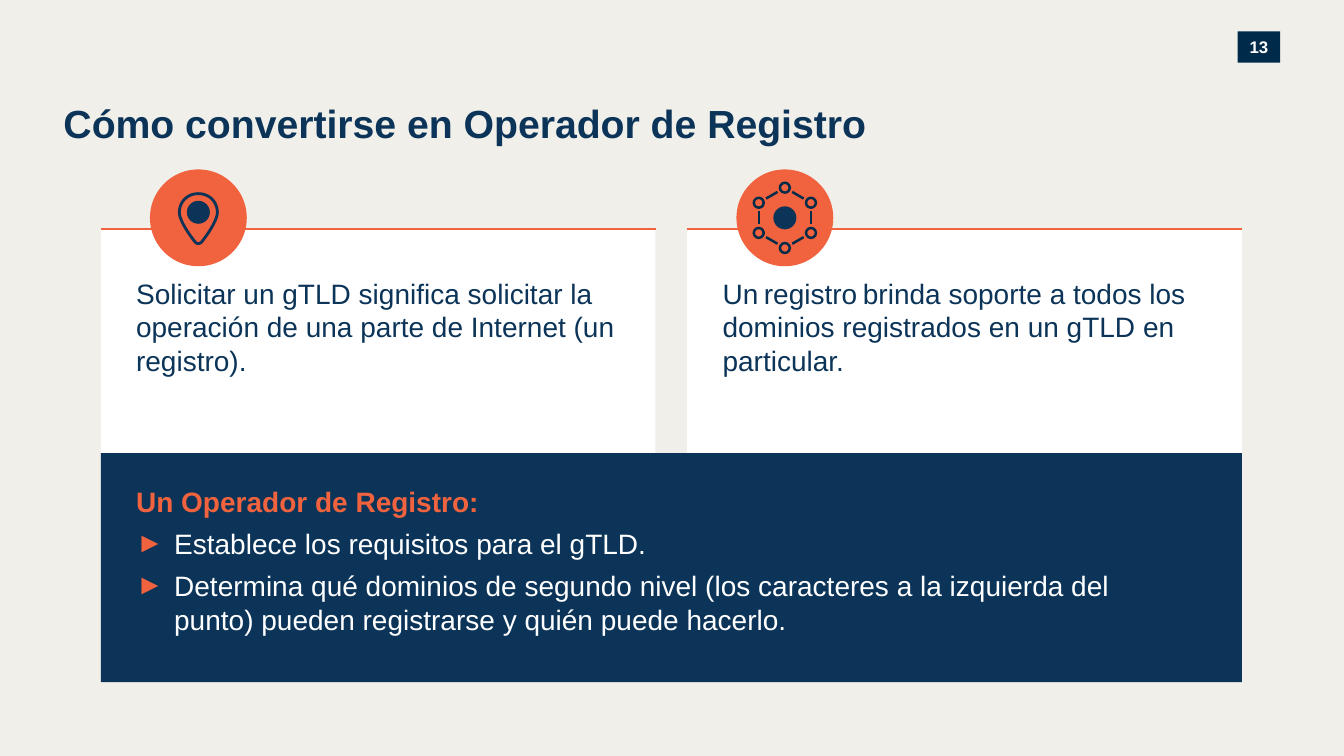
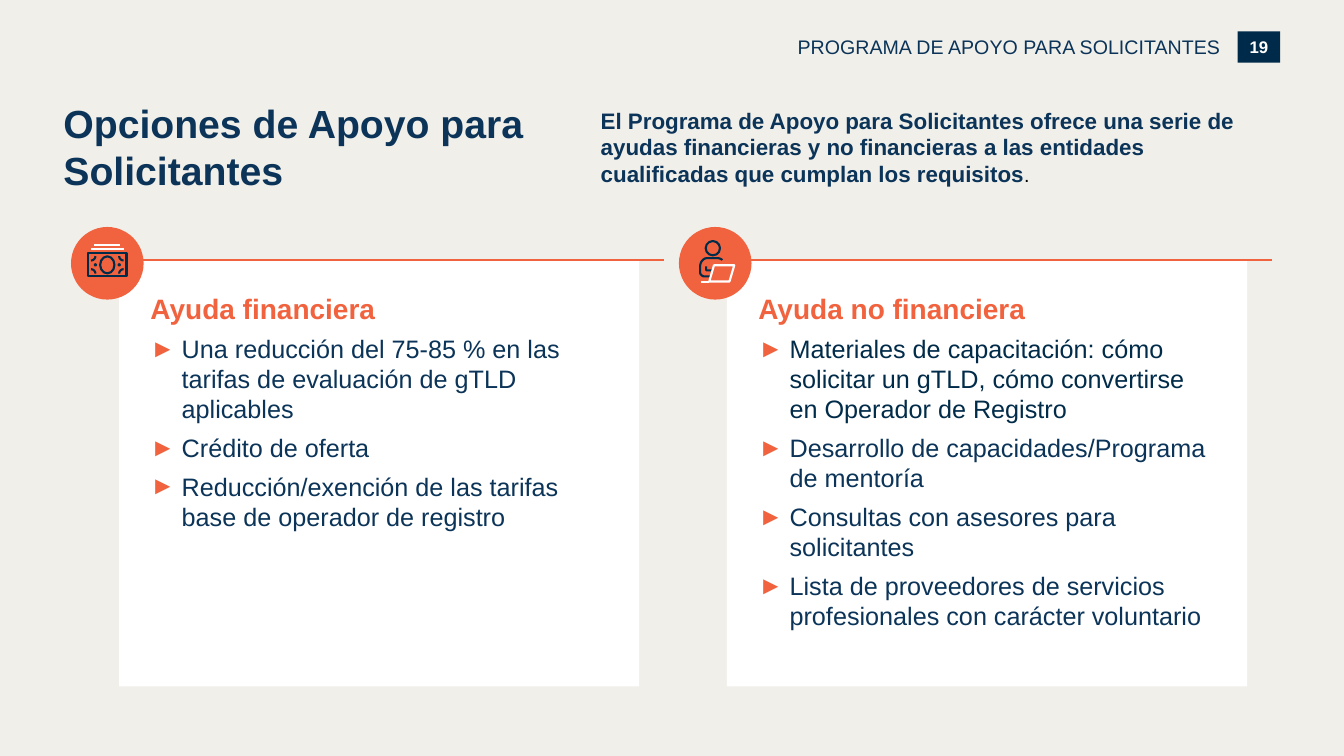
from math import cos, pi, sin

from lxml import etree
from pptx import Presentation
from pptx.dml.color import RGBColor
from pptx.enum.shapes import MSO_CONNECTOR, MSO_SHAPE
from pptx.enum.text import MSO_ANCHOR, MSO_AUTO_SIZE, PP_ALIGN
from pptx.oxml.ns import qn
from pptx.util import Cm, Pt

RECT, OVAL = MSO_SHAPE.RECTANGLE, MSO_SHAPE.OVAL
STRAIGHT = MSO_CONNECTOR.STRAIGHT
TOP, MIDDLE = MSO_ANCHOR.TOP, MSO_ANCHOR.MIDDLE
NO_FIT = MSO_AUTO_SIZE.NONE
LEFT, CENTER, RIGHT = PP_ALIGN.LEFT, PP_ALIGN.CENTER, PP_ALIGN.RIGHT

PAPER, WHITE, BLACK = "F1EFEA", "FFFFFF", "000000"
NAVY, INK, BADGE, ORANGE = "0B3458", "002B49", "002A49", "F1633E"

TITLE = {"size": 28, "bold": True, "color": NAVY}
HEADING = {"size": 20, "bold": True, "color": ORANGE}
BODY = {"size": 20, "color": NAVY}
SMALL_GAP = {"size": 14, "color": BLACK}
ITEM = {"size": 18, "color": NAVY}
ITEM_INK = {"size": 18, "color": INK}
ITEM_WHITE = {"size": 20, "color": WHITE}
LEAD = {"size": 16, "bold": True, "color": NAVY}
SECTION = {"size": 14, "color": NAVY}
NUMBER = {"size": 12, "bold": True, "color": WHITE}


def rgb(value):
    return RGBColor.from_string(value)


def box(x, y, w, h):
    return Cm(x), Cm(y), Cm(w), Cm(h)


def style_run(r, fmt):
    values = {"name": "Arial", "bold": False, **fmt}
    values["size"] = Pt(values["size"])
    r.font.color.rgb = rgb(values.pop("color"))
    for key, value in values.items():
        setattr(r.font, key, value)


def add_bullet(p, indent):
    pPr = p._p.get_or_add_pPr()
    pPr.set("marL", str(Cm(indent)))
    pPr.set("indent", str(-Cm(indent)))
    clr = etree.SubElement(pPr, qn("a:buClr"))
    etree.SubElement(clr, qn("a:srgbClr")).set("val", ORANGE)
    etree.SubElement(pPr, qn("a:buFont")).set("typeface", "Arial")
    etree.SubElement(pPr, qn("a:buChar")).set("char", "►")


def write(sp, paragraphs, insets=(0, 0, 0, 0), anchor=TOP, align=LEFT, indent=0):
    tf = sp.text_frame
    left, top, right, bottom = map(Cm, insets)
    frame = {"word_wrap": True, "auto_size": NO_FIT, "vertical_anchor": anchor,
             "margin_left": left, "margin_top": top,
             "margin_right": right, "margin_bottom": bottom}
    for key, value in frame.items():
        setattr(tf, key, value)
    for i, runs in enumerate(paragraphs):
        p = tf.paragraphs[0] if i == 0 else tf.add_paragraph()
        p.alignment = align
        if i:
            p.space_before = Pt(6)
            add_bullet(p, indent)
        for text, fmt in runs:
            r = p.add_run()
            r.text = text
            style_run(r, fmt)


def paint(sp, fill=None, line=None, width=1.5):
    sp.shadow.inherit = False
    if fill:
        sp.fill.solid()
        sp.fill.fore_color.rgb = rgb(fill)
    else:
        sp.fill.background()
    if line:
        sp.line.color.rgb = rgb(line)
        sp.line.width = Pt(width)
    else:
        sp.line.fill.background()
    return sp


def add_rect(shapes, area, fill):
    return paint(shapes.add_shape(RECT, *box(*area)), fill)


def add_line(shapes, x1, y1, x2, y2, color, width):
    ln = shapes.add_connector(STRAIGHT, Cm(x1), Cm(y1), Cm(x2), Cm(y2))
    ln.line.color.rgb = rgb(color)
    ln.line.width = Pt(width)
    etree.SubElement(ln._element.spPr, qn("a:effectLst"))


def centered(shapes, kind, cx, cy, w, h, **look):
    sp = shapes.add_shape(kind, *box(cx - w / 2, cy - h / 2, w, h))
    return paint(sp, **look)


def flatten(steps, count=12):
    points = [steps[0]]
    for step in steps[1:]:
        if len(step) == 2:
            points.append(step)
            continue
        x0, y0 = points[-1]
        x1, y1, x2, y2, x3, y3 = step
        for k in range(1, count + 1):
            t = k / count
            a, b, c, d = (1 - t) ** 3, 3 * t * (1 - t) ** 2, 3 * t * t * (1 - t), t ** 3
            points.append((a * x0 + b * x1 + c * x2 + d * x3,
                           a * y0 + b * y1 + c * y2 + d * y3))
    return points


def add_outline(shapes, cx, cy, steps, color, width, close=False):
    points = [(Cm(cx + x), Cm(cy + y)) for x, y in flatten(steps)]
    builder = shapes.build_freeform(*points[0])
    builder.add_line_segments(points[1:], close=close)
    paint(builder.convert_to_shape(), line=color, width=width)


def draw_pin(shapes, cx, cy):
    centered(shapes, OVAL, cx, cy - 0.14, 0.58, 0.58, fill=NAVY)
    pin = [(0.08, 0.61), (0.04, 0.66, -0.04, 0.66, -0.08, 0.61),
           (-0.23, 0.43, -0.48, 0.05, -0.48, -0.13),
           (-0.48, -0.41, -0.27, -0.61, 0, -0.61),
           (0.27, -0.61, 0.48, -0.41, 0.48, -0.13),
           (0.48, 0.05, 0.23, 0.43, 0.08, 0.61)]
    add_outline(shapes, cx, cy, pin, NAVY, 2, close=True)


def draw_network(shapes, cx, cy):
    nodes = [(cx + 0.76 * sin(k * pi / 3), cy - 0.76 * cos(k * pi / 3))
             for k in range(6)]
    for (x1, y1), (x2, y2) in zip(nodes, nodes[1:] + nodes[:1]):
        dx, dy = (x2 - x1) * 0.28, (y2 - y1) * 0.28
        add_line(shapes, x1 + dx, y1 + dy, x2 - dx, y2 - dy, INK, 1.75)
        centered(shapes, OVAL, x1, y1, 0.25, 0.25, line=INK, width=1.75)
    centered(shapes, OVAL, cx, cy, 0.58, 0.58, fill=NAVY)


def draw_banknote(shapes, cx, cy):
    mid = cy + 0.04
    centered(shapes, RECT, cx, mid, 0.97, 0.58, line=INK)
    centered(shapes, OVAL, cx, mid, 0.36, 0.43, line=INK)
    for sx in (-1, 1):
        centered(shapes, OVAL, cx + sx * 0.3, mid, 0.03, 0.03, line=INK)
        for sy in (-1, 1):
            corner = [(sx * 0.41, sy * 0.11),
                      (sx * 0.35, sy * 0.11, sx * 0.3, sy * 0.16, sx * 0.3, sy * 0.22)]
            add_outline(shapes, cx, mid, corner, INK, 1.5)
    for half, dy in ((0.41, -0.36), (0.33, -0.46)):
        add_line(shapes, cx - half, cy + dy, cx + half, cy + dy, WHITE, 1.5)


def draw_trainee(shapes, cx, cy):
    centered(shapes, OVAL, cx - 0.06, cy - 0.38, 0.36, 0.36, line=INK)
    arm = [(-0.08, 0.18), (-0.2, 0.18), (-0.22, 0.18, -0.23, 0.17, -0.23, 0.15),
           (-0.23, 0.08)]
    body = [(0.18, -0.08), (0.15, -0.11, 0.1, -0.13, 0.05, -0.13), (-0.2, -0.13),
            (-0.3, -0.13, -0.38, -0.03, -0.38, 0.08), (-0.38, 0.23),
            (-0.38, 0.28, -0.33, 0.33, -0.28, 0.33), (-0.1, 0.33)]
    laptop = [(-0.03, 0.05), (0.48, 0.05), (0.36, 0.46), (-0.15, 0.46)]
    add_outline(shapes, cx, cy, arm, INK, 1.5)
    add_outline(shapes, cx, cy, body, INK, 1.5)
    add_line(shapes, cx - 0.36, cy + 0.46, cx - 0.15, cy + 0.46, WHITE, 1.5)
    add_outline(shapes, cx, cy, laptop, WHITE, 1.5, close=True)


def add_icon(s, x, y, d, draw):
    shapes = s.shapes.add_group_shape().shapes
    cx, cy = x + d / 2, y + d / 2
    centered(shapes, OVAL, cx, cy, d, d, fill=ORANGE)
    draw(shapes, cx, cy)


def add_card(s, area, paragraphs, insets, rule, icon, draw, indent=0):
    x, y, w, h = area
    dx, dy, d = icon
    write(add_rect(s.shapes, area, WHITE), paragraphs, insets, indent=indent)
    add_line(s.shapes, x, y, x + rule, y, ORANGE, 1.25)
    add_icon(s, x + dx, y + dy, d, draw)


def add_text(s, area, runs, align=LEFT):
    write(s.shapes.add_textbox(*box(*area)), [runs], align=align)


def new_slide(prs, number, title, title_area):
    s = prs.slides.add_slide(prs.slide_layouts[5])
    sp = s.shapes.title
    sp.left, sp.top, sp.width, sp.height = box(*title_area)
    write(sp, [[(title, TITLE)]])
    badge = add_rect(s.shapes, (31.19, 0.79, 1.07, 0.79), BADGE)
    write(badge, [[(number, NUMBER)]], anchor=MIDDLE, align=CENTER)
    return s


def build_operator(prs):
    s = new_slide(prs, "13", "Cómo convertirse en Operador de Registro",
                  (1.6, 2.49, 24, 1.32))
    x, y, w, h, gap = 2.54, 5.77, 13.98, 5.65, 0.8
    cards = [
        ([("Solicitar un gTLD significa solicitar la operación de una parte "
           "de Internet (un registro).", BODY)], draw_pin),
        ([("Un", BODY), (" ", SMALL_GAP), ("registro", BODY), (" ", SMALL_GAP),
          ("brinda soporte a todos los dominios registrados en un gTLD "
           "en particular.", BODY)], draw_network),
    ]
    for i, (runs, draw) in enumerate(cards):
        add_card(s, (x + i * (w + gap), y, w, h), [runs], (0.89, 1.19, 0.99, 0.76),
                 w, (1.24, -1.5, 2.44), draw)
    panel = add_rect(s.shapes, (x, y + h, 2 * w + gap, 5.77), NAVY)
    duties = ["Establece los requisitos para el gTLD.",
              "Determina qué dominios de segundo nivel (los caracteres a la izquierda "
              "del punto) pueden registrarse y quién puede hacerlo."]
    write(panel, [[("Un Operador de Registro:", HEADING)]]
          + [[(text, ITEM_WHITE)] for text in duties],
          (0.89, 0.79, 1.19, 0.76), indent=0.96)


def build_support(prs):
    s = new_slide(prs, "19", "Opciones de Apoyo para Solicitantes",
                  (1.6, 2.49, 13.1, 2.34))
    add_text(s, (18.49, 0.89, 12.27, 0.61),
             [("PROGRAMA DE APOYO PARA SOLICITANTES", SECTION)], RIGHT)
    add_text(s, (15.14, 2.69, 16.74, 2.1),
             [("El Programa de Apoyo para Solicitantes ofrece una serie de ayudas "
               "financieras y no financieras a las entidades cualificadas que cumplan "
               "los requisitos", LEAD), (".", SMALL_GAP)])
    cards = [
        ("Ayuda financiera", draw_banknote, [
            ("Una reducción del 75-85 % en las tarifas de evaluación de gTLD "
             "aplicables", ITEM),
            ("Crédito de oferta", ITEM),
            ("Reducción/exención de las tarifas base de operador de registro", ITEM)]),
        ("Ayuda no financiera", draw_trainee, [
            ("Materiales de capacitación: cómo solicitar un gTLD, cómo convertirse "
             "en Operador de Registro", ITEM_INK),
            ("Desarrollo de capacidades/Programa de mentoría", ITEM),
            ("Consultas con asesores para solicitantes", ITEM),
            ("Lista de proveedores de servicios profesionales con carácter "
             "voluntario", ITEM)]),
    ]
    for i, (heading, draw, items) in enumerate(cards):
        add_card(s, (3 + i * 15.32, 6.55, 13.11, 10.75),
                 [[(heading, HEADING)]] + [[item] for item in items],
                 (0.79, 0.79, 0.89, 0.76), 13.74, (-1.21, -0.83, 1.83), draw,
                 indent=0.79)


def main():
    prs = Presentation()
    prs.slide_width, prs.slide_height = Cm(33.87), Cm(19.05)
    fill = prs.slide_master.background.fill
    fill.solid()
    fill.fore_color.rgb = rgb(PAPER)
    build_operator(prs)
    build_support(prs)
    prs.save("out.pptx")


if __name__ == "__main__":
    main()
